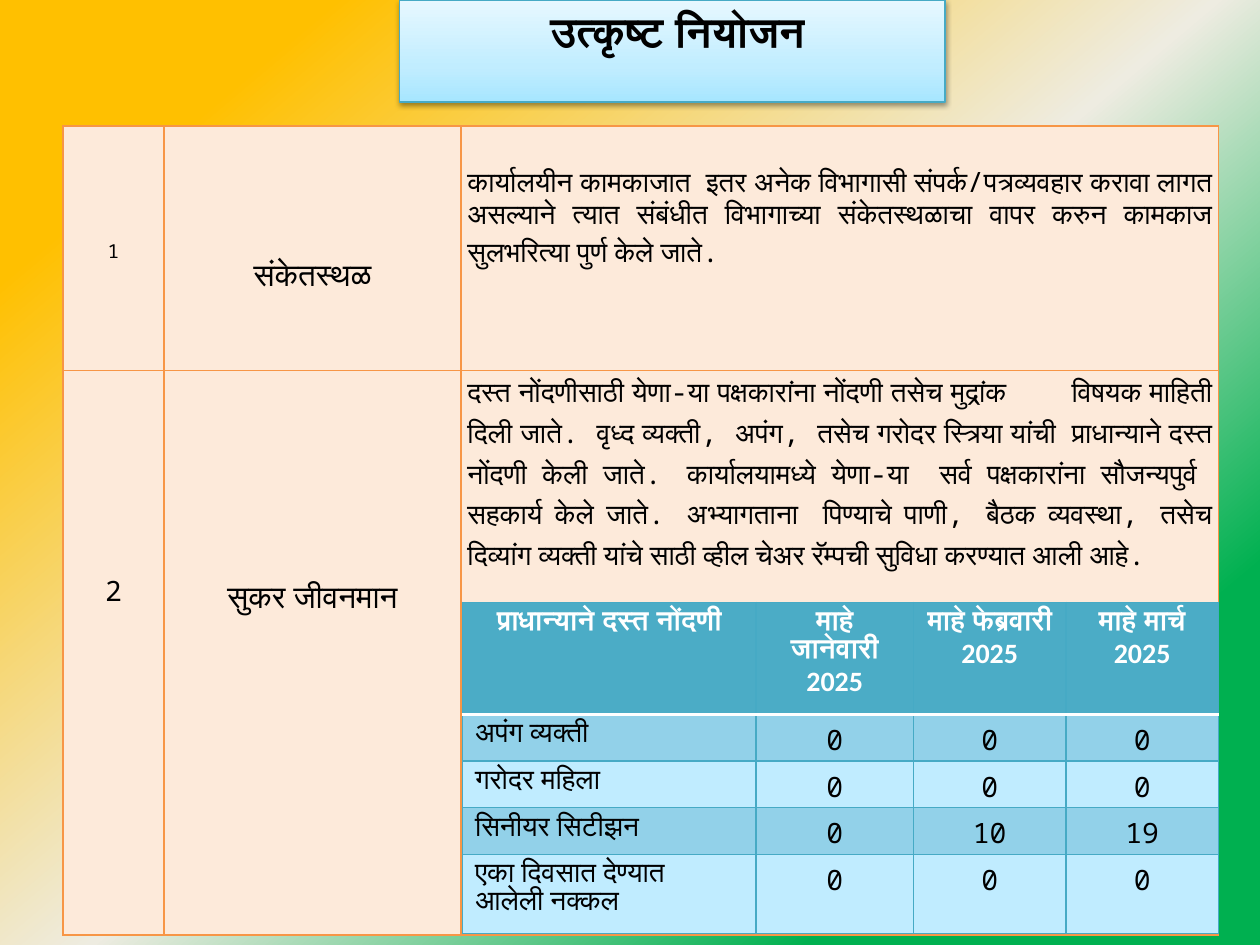
from lxml import etree
from pptx import Presentation
from pptx.dml.color import RGBColor
from pptx.enum.text import MSO_ANCHOR, MSO_AUTO_SIZE, PP_ALIGN
from pptx.oxml.ns import qn
from pptx.util import Inches, Pt

LEFT, CENTER, JUSTIFY = PP_ALIGN.LEFT, PP_ALIGN.CENTER, PP_ALIGN.JUSTIFY
MONO, SANS, TITLE_FONT = "Noto Sans Mono", "Calibri", "Lato"
BLACK, WHITE, ORANGE, PEACH = "000000", "FFFFFF", "F79646", "FDEADA"
TEAL, TEAL_LINE, BAND, PALE = "4BACC6", "46AAC5", "92D1E9", "C0ECFF"

# Content
TITLE = "उत्कृष्ट नियोजन"
# Each cell: text, size, alignment, top inset
TOPICS = [
    [("1", 11, CENTER, 0.87),
     ("संकेतस्थळ", 18, CENTER, 1.06),
     ("कार्यालयीन कामकाजात  इतर अनेक विभागासी संपर्क/पत्रव्यवहार करावा लागत "
      "असल्याने त्यात संबंधीत विभागाच्या संकेतस्थळाचा वापर करुन कामकाज "
      "सुलभरित्या पुर्ण केले जाते.", 16, JUSTIFY, 0.27)],
    [("2", 16, CENTER, 1.58),
     ("सुकर जीवनमान", 18, CENTER, 1.67),
     ("दस्त नोंदणीसाठी येणा-या पक्षकारांना नोंदणी तसेच मुद्रांक\tविषयक माहिती "
      "दिली जाते. वृध्द व्यक्ती, अपंग, तसेच गरोदर स्त्रिया यांची  प्राधान्याने दस्त "
      "नोंदणी केली जाते. कार्यालयामध्ये येणा-या  सर्व पक्षकारांना सौजन्यपुर्व  "
      "सहकार्य केले जाते. अभ्यागताना  पिण्याचे पाणी, बैठक व्यवस्था, तसेच "
      "दिव्यांग व्यक्ती यांचे साठी व्हील चेअर रॅम्पची सुविधा करण्यात आली आहे.",
      16, JUSTIFY, 0)],
]
PRIORITY = [
    ["प्राधान्याने दस्त नोंदणी", "माहे जानेवारी 2025", "माहे फेब्रवारी 2025", "माहे मार्च 2025"],
    ["अपंग व्यक्ती", "0", "0", "0"],
    ["गरोदर महिला", "0", "0", "0"],
    ["सिनीयर सिटीझन", "0", "10", "19"],
    ["एका दिवसात देण्यात आलेली नक्कल", "0", "0", "0"],
]


def rgb(color):
    return RGBColor.from_string(color)


def add(parent, tag, **attrs):
    return etree.SubElement(parent, qn(tag), {k: str(v) for k, v in attrs.items()})


def set_text(tf, text, size=16, font=MONO, color=BLACK, bold=False, align=LEFT, spacing=None):
    p = tf.paragraphs[0]
    p.alignment = align
    if spacing:
        p.line_spacing = spacing
    r = p.add_run()
    r.text = text
    r.font.size, r.font.name, r.font.bold = Pt(size), font, bold
    r.font.color.rgb = rgb(color)
    return p


def set_gradient(fill, holder, stops, angle):
    fill.solid()
    fill.fore_color.rgb = rgb(stops[0][1])
    grad = etree.Element(qn("a:gradFill"), rotWithShape="1")
    stop_list = add(grad, "a:gsLst")
    for pos, color in stops:
        add(add(stop_list, "a:gs", pos=pos * 1000), "a:srgbClr", val=color)
    add(grad, "a:lin", ang=angle * 60000, scaled=0)
    holder.replace(holder.find(qn("a:solidFill")), grad)


def style_cell(cell, fill, line, width, **special):
    """Fill a cell and draw its borders; T= or B= overrides one edge."""
    cell.fill.solid()
    cell.fill.fore_color.rgb = rgb(fill)
    tcPr = cell._tc.get_or_add_tcPr()
    for i, side in enumerate("LRTB"):
        color, points = special.get(side, (line, width))
        ln = etree.Element(qn("a:ln" + side), w=str(Pt(points)))
        add(add(ln, "a:solidFill"), "a:srgbClr", val=color)
        tcPr.insert(i, ln)


def add_grid(slide, left, top, widths, heights):
    frame = slide.shapes.add_table(len(heights), len(widths), Inches(left), Inches(top),
                                   Inches(sum(widths)), Inches(sum(heights)))
    table = frame.table
    table.first_row = table.horz_banding = False
    for col, width in zip(table.columns, widths):
        col.width = Inches(width)
    for row, height in zip(table.rows, heights):
        row.height = Inches(height)
    return table


prs = Presentation()
prs.slide_width, prs.slide_height = Inches(10), Inches(7.5)
slide = prs.slides.add_slide(prs.slide_layouts[5])

# Background
bg_fill = slide.background.fill
bg_fill.solid()
set_gradient(bg_fill, slide._element.find(".//" + qn("p:bgPr")),
             [(19, "00B050"), (49, "EEECE1"), (86, "FFC000")], 230)

# Title box
sp = slide.shapes.title
sp.left, sp.top, sp.width, sp.height = map(Inches, (3.17, 0, 4.33, 0.81))
set_gradient(sp.fill, sp._element.spPr, [(0, "A7E6FF"), (35, "C1EDFF"), (100, "E7F8FF")], 270)
sp.line.color.rgb = rgb(TEAL_LINE)
sp.line.width = Pt(0.75)
sp.shadow.inherit = False
shadow = add(sp._element.spPr.find(qn("a:effectLst")), "a:outerShdw", blurRad=Pt(3.1),
             dist=Pt(1.6), dir=90 * 60000, rotWithShape=0)
add(add(shadow, "a:srgbClr", val=BLACK), "a:alpha", val=38000)
tf = sp.text_frame
tf.auto_size = MSO_AUTO_SIZE.NONE
tf.vertical_anchor = MSO_ANCHOR.TOP
tf.margin_left, tf.margin_top = Inches(0.19), Inches(0.04)
set_text(tf, TITLE, size=24, font=TITLE_FONT, bold=True, align=CENTER)

# Topics table
topics = add_grid(slide, 0.5, 1, [0.8, 2.36, 6.01], [1.94, 4.48])
for i, row in enumerate(TOPICS):
    for j, (text, size, align, inset) in enumerate(row):
        cell = topics.cell(i, j)
        cell.margin_left = cell.margin_right = Inches(0.05)
        cell.margin_top, cell.margin_bottom = Inches(inset), 0
        p = set_text(cell.text_frame, text, size=size, align=align, spacing=1.07)
        if "\t" in text:
            add(add(p._p.get_or_add_pPr(), "a:tabLst"), "a:tab", pos=Inches(4.75), algn="l")
        style_cell(cell, PEACH, ORANGE, 1)

# Priority registration table
priority = add_grid(slide, 3.67, 4.78, [2.33, 1.25, 1.21, 1.21], [0.89, 0.37, 0.37, 0.37, 0.63])
header_rule = {0: {"B": (WHITE, 2)}, 1: {"T": (WHITE, 2)}}
for i, row in enumerate(PRIORITY):
    header = i == 0
    fill = TEAL if header else BAND if i % 2 else PALE
    for j, text in enumerate(row):
        cell = priority.cell(i, j)
        cell.margin_bottom = 0
        if j == 0 and not header:
            cell.margin_right = Inches(0.4)
        set_text(cell.text_frame, text, font=SANS if header or j == 0 else MONO,
                 color=WHITE if header else BLACK, bold=header,
                 align=CENTER if header or j else LEFT)
        style_cell(cell, fill, TEAL_LINE, 0.75, **header_rule.get(i, {}))

prs.save("out.pptx")
